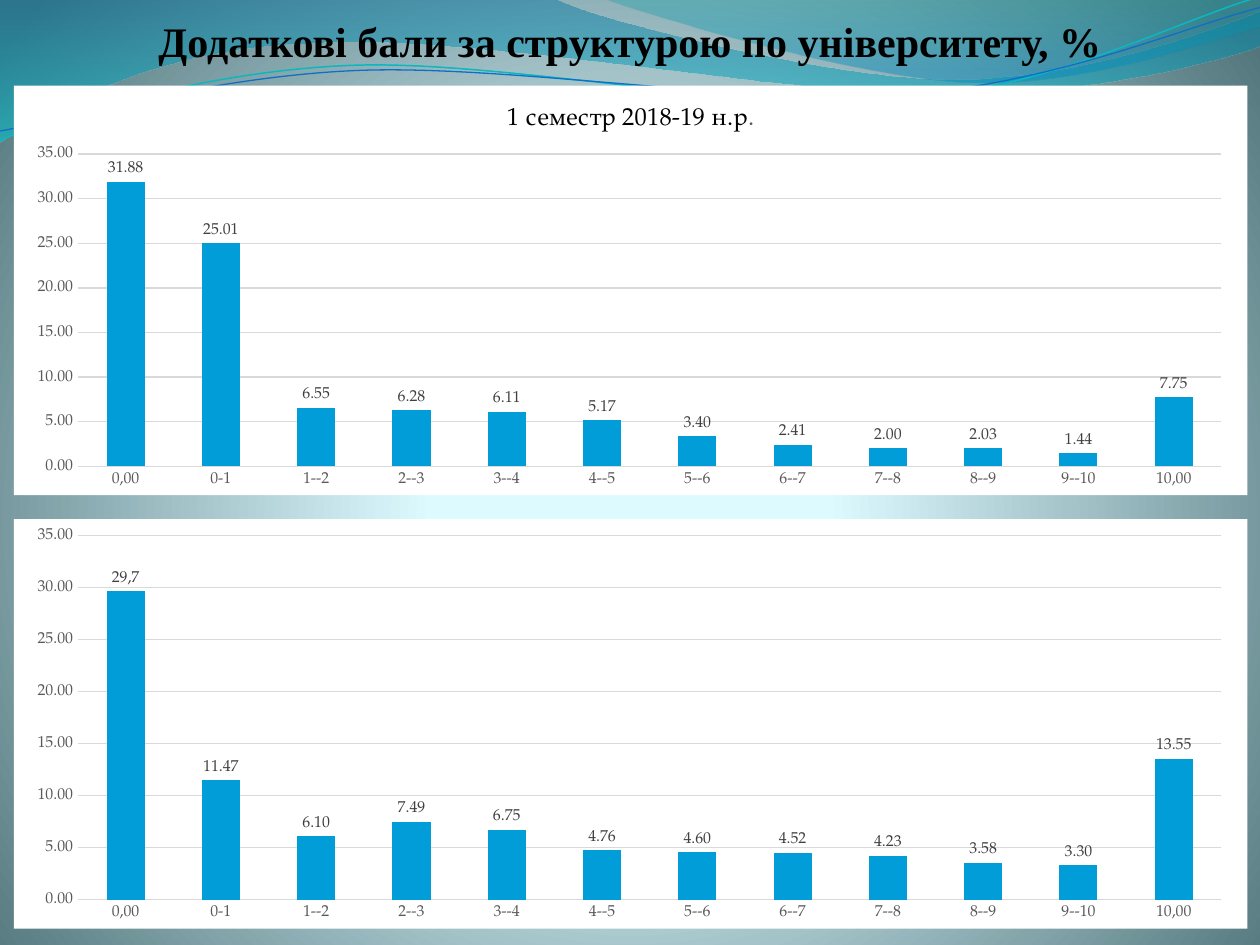
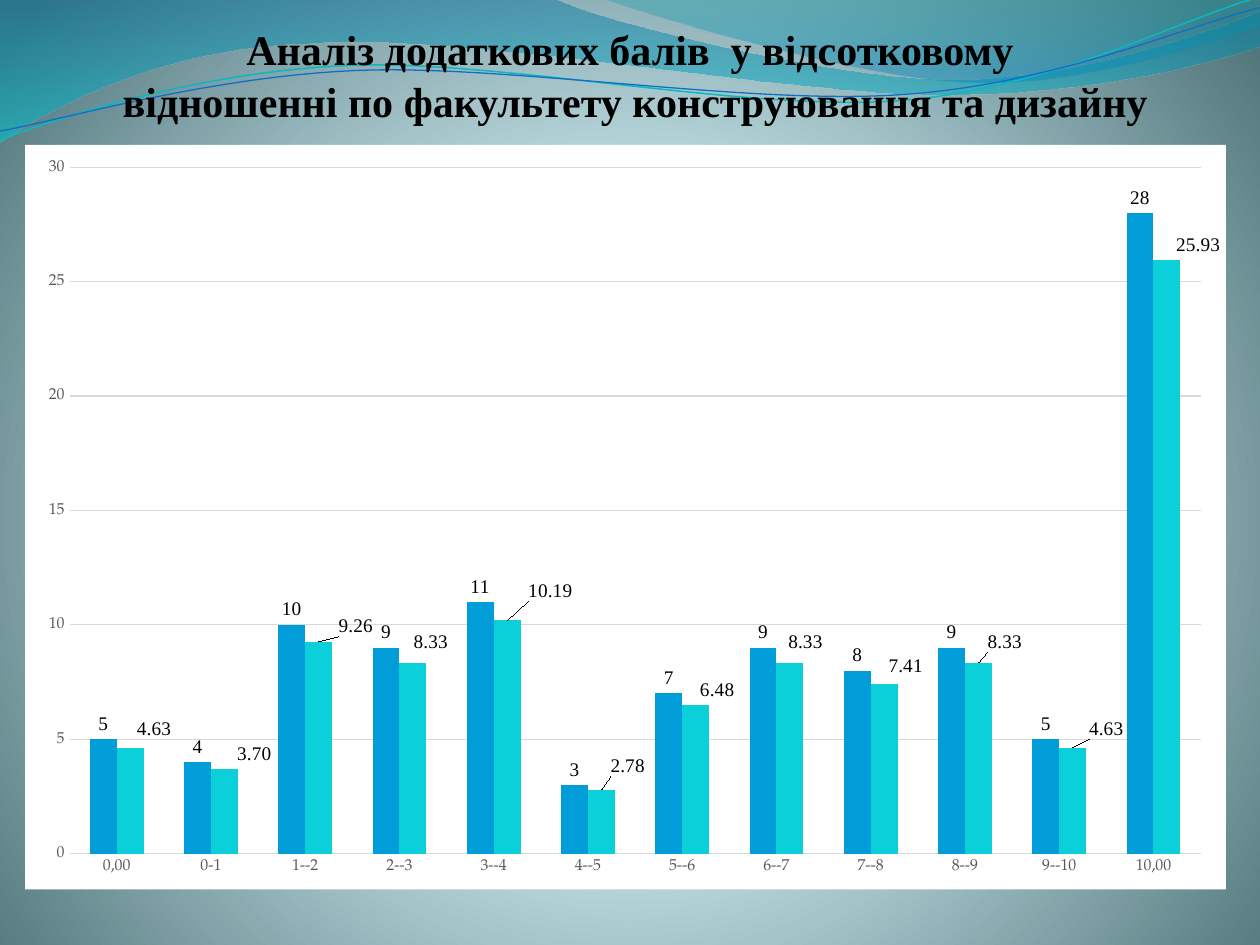
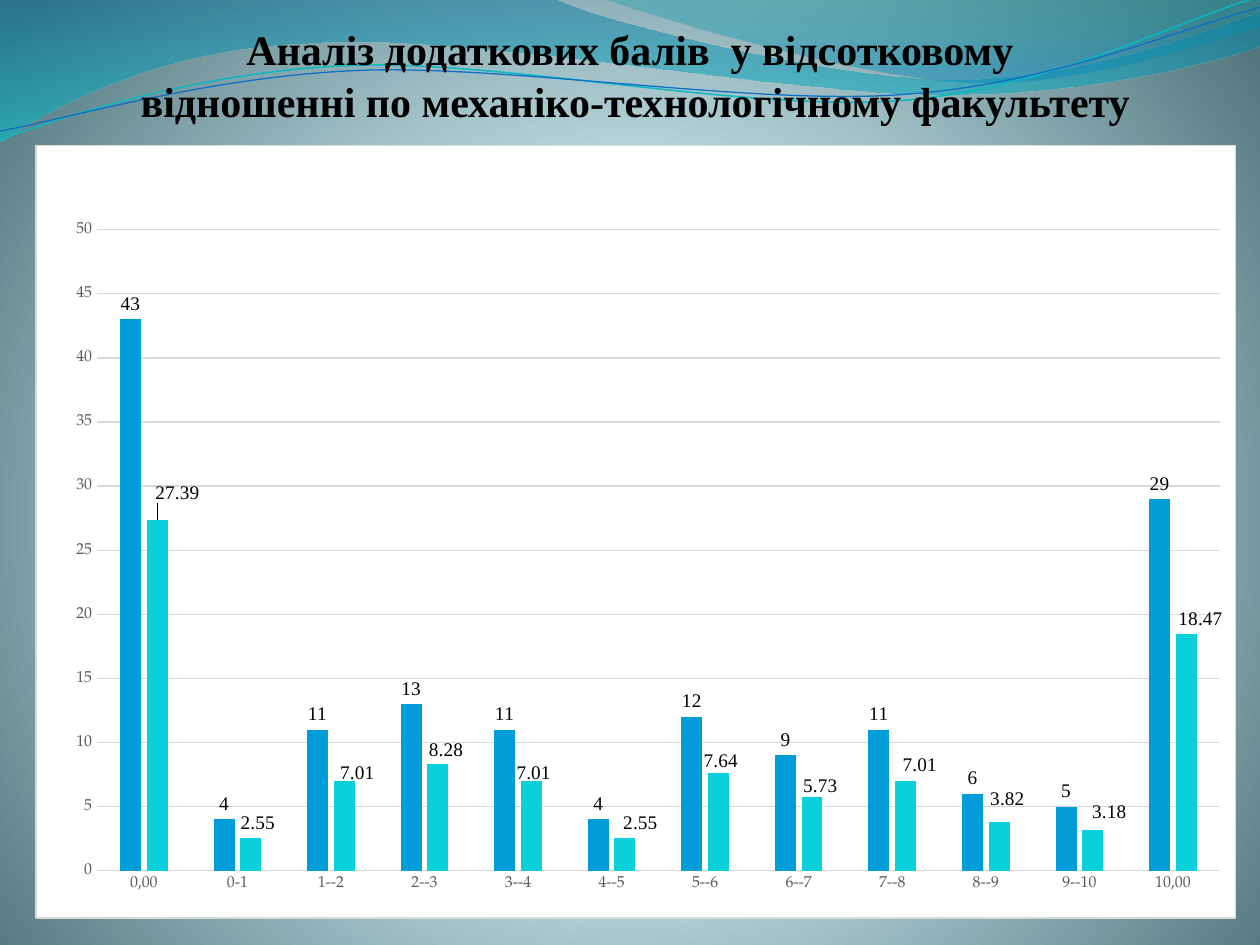
import pptx
import pptx.chart.data
import pptx.dml.color
import pptx.enum.chart
import pptx.enum.text
import pptx.oxml
import pptx.oxml.ns
import pptx.util
from dataclasses import dataclass

Inches = pptx.util.Inches
qn = pptx.oxml.ns.qn


@dataclass(frozen=True)
class Theme:
    heading_font: str = "Times New Roman"
    body_font: str = "TeX Gyre Pagella"
    black: str = "000000"
    dark: str = "404040"
    grey: str = "595959"
    grid: str = "D9D9D9"
    white: str = "FFFFFF"
    bars: tuple = ("009DD9", "0BD0D9")
    title_size: int = 24
    chart_title_size: int = 14
    chart_size: int = 10
    label_size: int = 11
    axis_size: int = 9
    hairline: float = 0.75


T = Theme()

# Gradient stops are (position %, colour, opacity %)
BACKGROUND = [(0, "DEFBFF", 100), (25, "DDFAFF", 100), (100, "52767C", 100)]
BACKGROUND_SHADE = ('<a:path path="circle"><a:fillToRect l="10000" t="110000" '
                    'r="10000" b="100000"/></a:path>')
DOWNWARD_SHADE = '<a:lin ang="5400000" scaled="1"/>'

# Outlines in inches: a pair is a corner, six numbers are a Bezier curve
BANDS = [
    ([(0, 0), (4.4, -0.01), (4.76, 0.17, 6.64, 0.63, 7.58, 0.63),
      (8.53, 0.63, 9.58, 0.26, 10, 0.09), (10.01, 0.36),
      (9.83, 0.44, 8.7, 0.76, 7.46, 0.75), (6.22, 0.75, 3.82, 0.28, 2.57, 0.34),
      (1.29, 0.36, 0.46, 0.83, -0.01, 1.13), (0, 0)],
     [(0, "0074A1", 45), (100, "00C6CF", 55)]),
    ([(4.79, -0.01), (5.09, 0.11, 6.82, 0.62, 7.69, 0.65),
      (8.56, 0.69, 9.61, 0.32, 10, 0.21), (10, 0), (4.79, -0.01)],
     [(0, "00A1A9", 30), (80, "008BBF", 45)]),
]
WAVES = [
    ([(0, 1.11), (0.48, 0.93, 1.58, 0.57, 2.77, 0.52),
      (3.95, 0.47, 5.93, 0.89, 7.13, 0.8), (8.33, 0.71, 9.38, 0.15, 9.98, -0.02)],
     "0AB8BF", 0.85),
    ([(0, 1.04), (0.47, 0.96, 1.64, 0.61, 2.83, 0.56),
      (4.03, 0.51, 5.97, 0.84, 7.17, 0.75), (8.36, 0.67, 9.41, 0.21, 10, 0.06)],
     "0F6FC6", 0.75),
]

SCORES = ["0,00", "0-1", "1--2", "2--3", "3--4", "4--5",
          "5--6", "6--7", "7--8", "8--9", "9--10", "10,00"]

# "plot" and "shifts" are percentages of the chart's width and height
UNIVERSITY = dict(top=35, fmt="0.00", label_color=T.dark, label_font=T.body_font,
                  label_size=T.axis_size)
FACULTY = dict(label_color=T.black, label_font=T.heading_font, label_size=T.label_size)
SLIDES = [
    dict(title="Додаткові бали за структурою по університету, %",
         title_box=(0.5, -0.03, 9, 0.55),
         charts=[
             dict(UNIVERSITY, box=(0.11, 4.12, 9.79, 3.25), plot=(5.2, 4, 92.7, 89),
                  series=[[29.66, 11.47, 6.1, 7.49, 6.75, 4.76,
                           4.6, 4.52, 4.23, 3.58, 3.3, 13.55]],
                  own_labels={0: "29,7"}),
             dict(UNIVERSITY, box=(0.11, 0.68, 9.79, 3.25), plot=(5.2, 16.7, 92.7, 76.3),
                  title=[("1 семестр 2018-19 н.р", T.black), (".", T.grey)],
                  series=[[31.88, 25.01, 6.55, 6.28, 6.11, 5.17,
                           3.4, 2.41, 2, 2.03, 1.44, 7.75]]),
         ]),
    dict(title="Аналіз додаткових балів  у відсотковому\n"
               " відношенні по факультету конструювання та дизайну",
         title_box=(0.5, 0.13, 9, 0.87),
         charts=[
             dict(FACULTY, box=(0.2, 1.15, 9.53, 5.91), plot=(3.7, 3, 94.2, 92.2), top=30,
                  series=[[5, 4, 10, 9, 11, 3, 7, 9, 8, 9, 5, 28],
                          [4.63, 3.7, 9.26, 8.33, 10.19, 2.78,
                           6.48, 8.33, 7.41, 8.33, 4.63, 25.93]],
                  shifts=[(2, -0.5), (2.5, 0), (3.1, 0), (1.5, -0.8), (3.6, -1.9),
                          (2.2, -1.1), (1.8, 0), (1.3, -0.8), (1.8, -0.3),
                          (2.2, -0.8), (2.8, -0.5), (2.6, 0)]),
         ]),
    dict(title="Аналіз додаткових балів  у відсотковому\n"
               " відношенні по механіко-технологічному факультету",
         title_box=(0.5, 0.13, 9, 0.87),
         charts=[
             dict(FACULTY, box=(0.28, 1.15, 9.53, 6.14), plot=(5.1, 10.9, 93.6, 83), top=50,
                  gap=219, overlap=-27, outlined=True,
                  series=[[43, 4, 11, 13, 11, 4, 12, 9, 11, 6, 5, 29],
                          [27.39, 2.55, 7.01, 8.28, 7.01, 2.55,
                           7.64, 5.73, 7.01, 3.82, 3.18, 18.47]],
                  shifts=[(1.7, -1.4), (0.6, 0), (1.1, 1), (0.7, 0.1), (0.2, 1),
                          (1.3, 0), (0.2, 0.5), (0.7, 0.5), (1.2, 0),
                          (0.7, -0.9), (1.4, -0.3), (1.2, 0)]),
         ]),
]

NO_LEADER_LINES = (
    '<c:extLst><c:ext uri="{CE6537A1-D6FC-4f65-9D91-7224C49458BB}" '
    'xmlns:c15="http://schemas.microsoft.com/office/drawing/2012/chart">'
    '<c15:showLeaderLines val="0"/></c:ext></c:extLst>')


def rgb(color):
    return pptx.dml.color.RGBColor.from_string(color)


def xml(text):
    """Parse one element that may use the a: and c: prefixes."""
    head, mark, rest = text.partition(">")
    slash = "/" if head.endswith("/") else ""
    return pptx.oxml.parse_xml(
        f'{head.rstrip("/")} {pptx.oxml.ns.nsdecls("a", "c")}{slash}{mark}{rest}')


def set_font(font, size, color, name, bold=False):
    font.size = pptx.util.Pt(size)
    font.color.rgb = rgb(color)
    font.name = name
    font.bold = bold


def add_text(p, text, **fmt):
    """Append formatted text to a paragraph, with a line break at each newline."""
    for i, line in enumerate(text.split("\n")):
        if i:
            p.add_line_break()
        r = p.add_run()
        r.text = line
        set_font(r.font, **fmt)


def set_gradient(fill, element, stops, shade):
    fill.gradient()
    grad = element.find(".//" + qn("a:gradFill"))
    stops_xml = "".join(
        f'<a:gs pos="{pos * 1000}"><a:srgbClr val="{color}">'
        f'<a:alpha val="{opacity * 1000}"/></a:srgbClr></a:gs>'
        for pos, color, opacity in stops)
    grad.getparent().replace(
        grad, xml(f'<a:gradFill rotWithShape="1"><a:gsLst>{stops_xml}</a:gsLst>{shade}</a:gradFill>'))


def add_outline(s, outline, close):
    """Build a freeform through all points, then join each curve's three points."""
    points = [(Inches(part[i]), Inches(part[i + 1]))
              for part in outline for i in range(0, len(part), 2)]
    builder = s.shapes.build_freeform(*points[0])
    builder.add_line_segments(points[1:], close=close)
    sp = builder.convert_to_shape()
    sp.shadow.inherit = False
    steps = iter(sp._element.findall(".//" + qn("a:lnTo")))
    for part in outline[1:]:
        first, *others = [next(steps) for _ in range(len(part) // 2)]
        if others:
            curve = xml("<a:cubicBezTo/>")
            first.addprevious(curve)
            for step in (first, *others):
                curve.append(step[0])
                step.getparent().remove(step)
    return sp


def add_backdrop(master, s):
    """Draw the shared backdrop with a slide's shape tools and move it to the master."""
    set_gradient(master.background.fill, master._element, BACKGROUND, BACKGROUND_SHADE)
    drawn = []
    for outline, stops in BANDS:
        sp = add_outline(s, outline, close=True)
        set_gradient(sp.fill, sp._element, stops, DOWNWARD_SHADE)
        sp.line.fill.background()
        drawn.append(sp)
    for outline, color, width in WAVES:
        sp = add_outline(s, outline, close=False)
        sp.fill.background()
        sp.line.color.rgb = rgb(color)
        sp.line.width = pptx.util.Pt(width)
        drawn.append(sp)
    for number, sp in enumerate(drawn, start=20):
        sp._element.nvSpPr.cNvPr.set("id", str(number))
        master.shapes._spTree.append(sp._element)


def add_title(s, text, box):
    tf = s.shapes.add_textbox(*map(Inches, box)).text_frame
    tf.word_wrap = True
    tf.vertical_anchor = pptx.enum.text.MSO_ANCHOR.BOTTOM
    tf.margin_left = tf.margin_right = tf.margin_bottom = 0
    tf.margin_top = Inches(0.05)
    p = tf.paragraphs[0]
    p.alignment = pptx.enum.text.PP_ALIGN.CENTER
    p.line_spacing = 1.04
    add_text(p, text, size=T.title_size, color=T.black, name=T.heading_font, bold=True)


def manual_layout(inner, **places):
    target = '<c:layoutTarget val="inner"/><c:xMode val="edge"/><c:yMode val="edge"/>' if inner else ""
    values = "".join(f'<c:{key} val="{value / 100:.3f}"/>' for key, value in places.items())
    return xml(f"<c:layout><c:manualLayout>{target}{values}</c:manualLayout></c:layout>")


def style_frame(chart, plot, outlined):
    set_font(chart.font, T.chart_size, T.black, T.body_font)
    line = (f'<a:ln w="{pptx.util.Pt(T.hairline)}"><a:solidFill><a:srgbClr val="{T.grid}"/></a:solidFill></a:ln>'
            if outlined else "<a:ln><a:noFill/></a:ln>")
    chart._chartSpace.find(qn("c:txPr")).addprevious(xml(
        f'<c:spPr><a:solidFill><a:srgbClr val="{T.white}"/></a:solidFill>{line}</c:spPr>'))
    area = chart._chartSpace.find(".//" + qn("c:plotArea"))
    for old in area.findall(qn("c:layout")):
        area.remove(old)
    area.insert(0, manual_layout(True, **dict(zip("xywh", plot))))


def style_axes(chart, top, fmt, outlined):
    for axis in (chart.category_axis, chart.value_axis):
        axis.major_tick_mark = axis.minor_tick_mark = pptx.enum.chart.XL_TICK_MARK.NONE
        set_font(axis.tick_labels.font, T.axis_size, T.grey, T.body_font)
        axis.format.line.fill.background()
    lines = [chart.value_axis.major_gridlines.format.line]
    if outlined:
        lines.append(chart.category_axis.format.line)
    for line in lines:
        line.color.rgb = rgb(T.grid)
        line.width = pptx.util.Pt(T.hairline)
    axis = chart.value_axis
    axis.minimum_scale, axis.maximum_scale, axis.major_unit = 0, top, 5
    axis.tick_labels.number_format = fmt
    axis.tick_labels.number_format_is_linked = False


def style_labels(series, fmt, font, shifts, own_labels):
    outside = pptx.enum.chart.XL_LABEL_POSITION.OUTSIDE_END
    labels = series.data_labels
    labels.show_value = True
    labels.position = outside
    labels.number_format = fmt
    labels.number_format_is_linked = False
    set_font(labels.font, **font)
    for i, text in own_labels.items():
        label = series.points[i].data_label
        add_text(label.text_frame.paragraphs[0], text, **font)
        label.position = outside
    for i, (dx, dy) in enumerate(shifts):
        label = series.points[i].data_label
        set_font(label.font, **font)
        label.position = outside
        idx = label._dLbl.find(qn("c:idx"))
        idx.addnext(xml(f'<c:numFmt formatCode="{fmt}" sourceLinked="0"/>'))
        idx.addnext(manual_layout(False, x=dx, y=dy))
    labels._element.append(xml(NO_LEADER_LINES))


def add_bars(s, box, plot, series, top, label_color, label_font, label_size, fmt="General",
             title=(), gap=150, overlap=0, outlined=False, shifts=(), own_labels=None):
    formats = [fmt, "0.00"]
    data = pptx.chart.data.CategoryChartData()
    data.categories = SCORES
    for i, values in enumerate(series):
        data.add_series(f"Series {i + 1}", values, formats[i])
    kind = pptx.enum.chart.XL_CHART_TYPE.COLUMN_CLUSTERED
    chart = s.shapes.add_chart(kind, *map(Inches, box), data).chart
    chart.has_legend = False
    chart.has_title = bool(title)
    for text, color in title:
        add_text(chart.chart_title.text_frame.paragraphs[0], text,
                 size=T.chart_title_size, color=color, name=T.body_font)
    style_frame(chart, plot, outlined)
    style_axes(chart, top, fmt, outlined)
    bars = chart.plots[0]
    bars.vary_by_categories = False
    bars.gap_width, bars.overlap = gap, overlap
    font = dict(size=label_size, color=label_color, name=label_font)
    for i, ser in enumerate(bars.series):
        ser.format.fill.solid()
        ser.format.fill.fore_color.rgb = rgb(T.bars[i])
        ser.invert_if_negative = False
        style_labels(ser, formats[i], font, shifts if i else (), own_labels or {})


def main():
    prs = pptx.Presentation()
    prs.slide_width, prs.slide_height = Inches(10), Inches(7.5)
    slides = [prs.slides.add_slide(prs.slide_layouts[6]) for _ in SLIDES]
    add_backdrop(prs.slide_master, slides[0])
    for s, content in zip(slides, SLIDES):
        add_title(s, content["title"], content["title_box"])
        for chart in content["charts"]:
            add_bars(s, **chart)
    prs.save("out.pptx")


if __name__ == "__main__":
    main()
